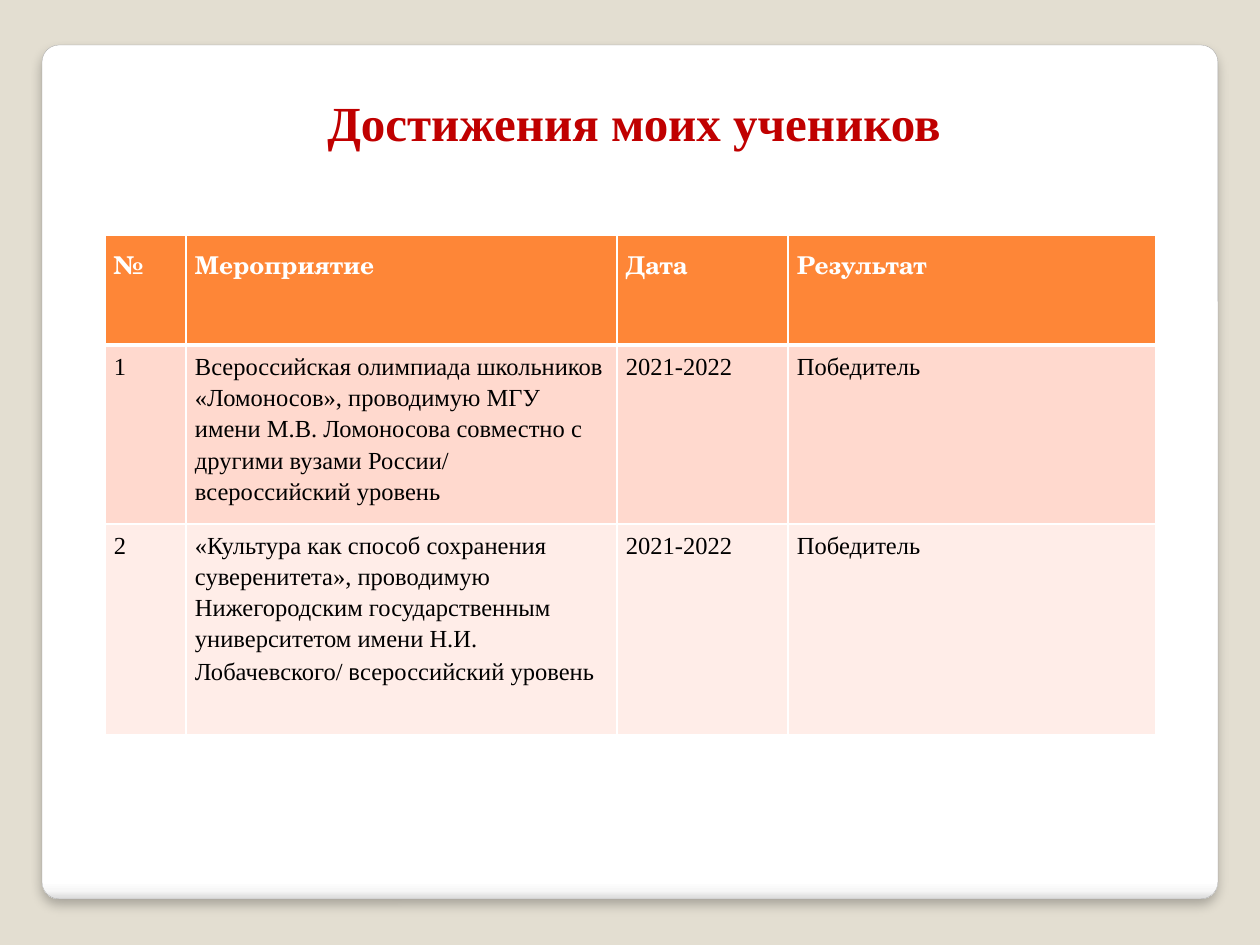
import pptx
import pptx.util
import pptx.dml.color
import pptx.enum.shapes
import pptx.enum.text
import pptx.oxml
import pptx.oxml.ns

# Content
TITLE = "Достижения моих учеников"
SERIF, HEAD_FONT, SANS = "Times New Roman", "TeX Gyre Schola", "Calibri"
# A cell is a list of paragraphs; a paragraph is a list of (text, font), None = cell font
HEADER = ["№", "Мероприятие", "Дата", "Результат"]
EVENTS = [
    [[("Всероссийская олимпиада школьников «Ломоносов», проводимую МГУ имени "
       "М.В. Ломоносова совместно с другими вузами России/", None)],
     [("всероссийский уровень", None)]],
    [[("«Культура как способ сохранения суверенитета», проводимую Нижегородским "
       "государственным университетом имени Н.И. Лобачевского/", None),
      (" в", SANS), ("сероссийский уровень", None)]],
]
DATE, RESULT = "2021-2022", "Победитель"
ROWS = [HEADER] + [[str(n), event, DATE, RESULT] for n, event in enumerate(EVENTS, 1)]

COLORS = {"back": "E3DED1", "edge": "A4A4A4", "title": "C00000", "white": "FFFFFF",
          "text": "000000", "head": "FE8637", "band1": "FFD9CE", "band2": "FFEDE8"}
PANEL_STOPS = [(0, "FFFFFF"), (98, "FFFFFF"), (99, "F7F7F7"), (100, "DADADA")]
ROW_FILLS = ["head", "band1", "band2"]

# Layout in px
SCALE = 914400 // 126
PANEL = (42, 45, 1176, 854)
TITLE_BOX = (123, 82, 1022, 149)
TABLE_LEFT, TABLE_TOP = 105, 235
COL_WIDTHS = [81, 431, 171, 368]
ROW_HEIGHTS = [110, 178, 211]
NS = pptx.oxml.ns.nsdecls("a")


def px(n):
    return pptx.util.Emu(n * SCALE)


def rgb(name):
    return pptx.dml.color.RGBColor.from_string(COLORS[name])


def set_borders(cell, top, bottom):
    tc_pr = cell._tc.get_or_add_tcPr()
    for side, width in (("L", 1), ("R", 1), ("T", top), ("B", bottom)):
        tc_pr.append(pptx.oxml.parse_xml(
            f'<a:ln{side} {NS} w="{width * 12700}"><a:solidFill>'
            f'<a:srgbClr val="{COLORS["white"]}"/></a:solidFill></a:ln{side}>'))


def fill_cell(cell, content, is_head):
    if isinstance(content, str):
        content = [[(content, None)]]
    cell.margin_left = cell.margin_right = px(9)
    cell.margin_top = cell.margin_bottom = px(5)
    tf = cell.text_frame
    for i, runs in enumerate(content):
        p = tf.add_paragraph() if i else tf.paragraphs[0]
        p.line_spacing = 1.15
        p.font.size = pptx.util.Pt(14)
        p.font.bold = is_head
        p.font.color.rgb = rgb("white" if is_head else "text")
        for text, font in runs:
            r = p.add_run()
            r.text = text
            r.font.name = font or (HEAD_FONT if is_head else SERIF)
            r.font.size = pptx.util.Pt(14)
            r.font.bold = is_head
            r.font.color.rgb = rgb("white" if is_head else "text")


prs = pptx.Presentation()
prs.slide_width, prs.slide_height = px(1260), px(945)
s = prs.slides.add_slide(prs.slide_layouts[6])
s.background.fill.solid()
s.background.fill.fore_color.rgb = rgb("back")

# Panel with gradient and soft shadow
sp = s.shapes.add_shape(pptx.enum.shapes.MSO_SHAPE.ROUNDED_RECTANGLE, *map(px, PANEL))
sp.adjustments[0] = 0.02
sp.line.color.rgb = rgb("edge")
sp.line.width = pptx.util.Pt(0.16)
sp.fill.gradient()
sp.fill.gradient_angle = 270
stops = sp._element.spPr.find(".//" + pptx.oxml.ns.qn("a:gsLst"))
stops.clear()
for pos, color in PANEL_STOPS:
    stops.append(pptx.oxml.parse_xml(
        f'<a:gs {NS} pos="{pos * 1000}"><a:srgbClr val="{color}"/></a:gs>'))
sp.shadow.inherit = False
sp._element.spPr.find(pptx.oxml.ns.qn("a:effectLst")).append(pptx.oxml.parse_xml(
    f'<a:outerShdw {NS} blurRad="76200" dist="50800" dir="5400000" algn="tl" '
    f'rotWithShape="0"><a:srgbClr val="000000"><a:alpha val="25000"/></a:srgbClr>'
    f'</a:outerShdw>'))

# Title
tf = s.shapes.add_textbox(*map(px, TITLE_BOX)).text_frame
tf.word_wrap = True
tf.vertical_anchor = pptx.enum.text.MSO_ANCHOR.TOP
tf.margin_top = px(11)
p = tf.paragraphs[0]
p.text = TITLE
p.alignment = pptx.enum.text.PP_ALIGN.CENTER
p.font.name = SERIF
p.font.size = pptx.util.Pt(28)
p.font.bold = True
p.font.color.rgb = rgb("title")

# Table of achievements
table = s.shapes.add_table(len(ROWS), len(COL_WIDTHS), px(TABLE_LEFT), px(TABLE_TOP),
                           px(sum(COL_WIDTHS)), px(sum(ROW_HEIGHTS))).table
for column, width in zip(table.columns, COL_WIDTHS):
    column.width = px(width)
for i, (row, height) in enumerate(zip(ROWS, ROW_HEIGHTS)):
    table.rows[i].height = px(height)
    for j, content in enumerate(row):
        cell = table.cell(i, j)
        fill_cell(cell, content, i == 0)
        set_borders(cell, top=3 if i == 1 else 1, bottom=3 if i == 0 else 1)
        cell.fill.solid()
        cell.fill.fore_color.rgb = rgb(ROW_FILLS[i])

prs.save("out.pptx")
